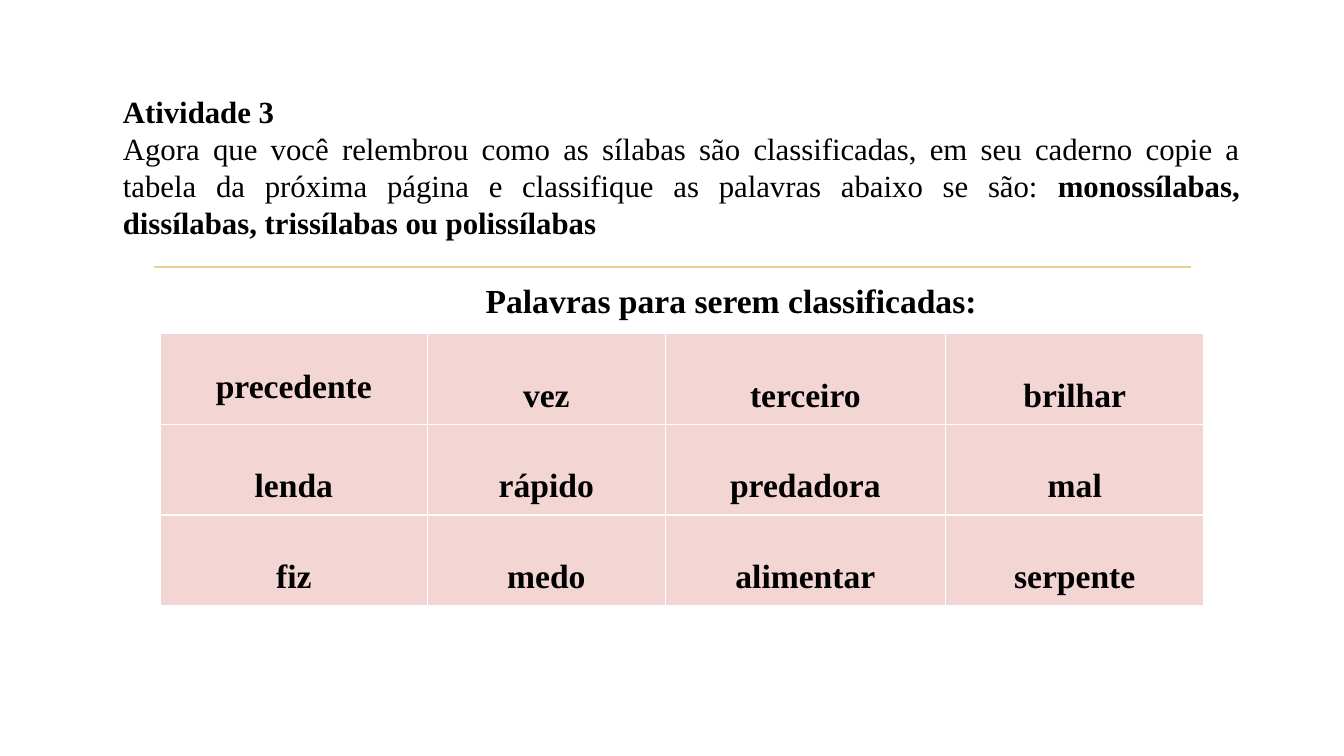
from lxml import etree
from pptx import Presentation
from pptx.dml.color import RGBColor
from pptx.enum.shapes import MSO_CONNECTOR
from pptx.enum.text import MSO_ANCHOR, MSO_AUTO_SIZE, PP_ALIGN
from pptx.oxml.ns import qn
from pptx.util import Pt

STRAIGHT = MSO_CONNECTOR.STRAIGHT
TOP = MSO_ANCHOR.TOP
FIT_SHAPE = MSO_AUTO_SIZE.SHAPE_TO_FIT_TEXT
LEFT, CENTER, JUSTIFY = PP_ALIGN.LEFT, PP_ALIGN.CENTER, PP_ALIGN.JUSTIFY

BLACK = RGBColor(0x00, 0x00, 0x00)
GOLD = RGBColor(0xE8, 0xD1, 0x91)
PINK = RGBColor(0xF3, 0xD5, 0xD3)
FONT = "Times New Roman"

STATEMENT = [
    (LEFT, [("Atividade 3", True)]),
    (JUSTIFY, [
        ("Agora que você relembrou como as sílabas são classificadas, em seu caderno "
         "copie a tabela da próxima página e classifique as palavras abaixo se são: ", False),
        ("monossílabas, dissílabas, trissílabas ou polissílabas", True),
    ]),
]
WORDS = [
    ["precedente", "vez", "terceiro", "brilhar"],
    ["lenda", "rápido", "predadora", "mal"],
    ["fiz", "medo", "alimentar", "serpente"],
]
COLUMN_WIDTHS = [190.8, 169.9, 200.2, 184.7]


def add_run(p, text, size, bold=True):
    """Append one black run to a paragraph."""
    r = p.add_run()
    r.text = text
    r.font.name = FONT
    r.font.size = Pt(size)
    r.font.bold = bold
    r.font.color.rgb = BLACK


def place_statement(s, left, top, width, height):
    """Fill the title placeholder with the activity statement."""
    sp = s.shapes.title
    sp.left, sp.top, sp.width, sp.height = Pt(left), Pt(top), Pt(width), Pt(height)
    tf = sp.text_frame
    tf.word_wrap = True
    tf.auto_size = FIT_SHAPE
    tf.vertical_anchor = TOP
    for i, (align, runs) in enumerate(STATEMENT):
        p = tf.add_paragraph() if i else tf.paragraphs[0]
        p.alignment = align
        for text, bold in runs:
            add_run(p, text, 22, bold)


def add_divider(s, left, top, width):
    """Draw the thin gold rule."""
    line = s.shapes.add_connector(STRAIGHT, Pt(left), Pt(top), Pt(left + width), Pt(top))
    line.line.color.rgb = GOLD
    line.line.width = Pt(1.25)
    etree.SubElement(line._element.spPr, qn("a:effectLst"))


def add_caption(s, left, top, width, height):
    """Add the heading above the word table."""
    sp = s.shapes.add_textbox(Pt(left), Pt(top), Pt(width), Pt(height))
    tf = sp.text_frame
    tf.word_wrap = False
    tf.auto_size = FIT_SHAPE
    add_run(tf.paragraphs[0], "Palavras para serem classificadas:", 24)


def add_word_table(s, left, top, width, height):
    """Add the grid of words to classify."""
    table = s.shapes.add_table(len(WORDS), len(WORDS[0]), Pt(left), Pt(top),
                               Pt(width), Pt(height)).table
    table.horz_banding = False
    for column, column_width in zip(table.columns, COLUMN_WIDTHS):
        column.width = Pt(column_width)
    for row, words in zip(table.rows, WORDS):
        row.height = Pt(height / len(WORDS))
        for cell, word in zip(row.cells, words):
            cell.fill.solid()
            cell.fill.fore_color.rgb = PINK
            cell.vertical_anchor = TOP
            cell.margin_top = Pt(25 if word == "precedente" else 31.2)
            p = cell.text_frame.paragraphs[0]
            p.alignment = CENTER
            add_run(p, word, 24)


def main():
    """Build the activity slide and save it."""
    prs = Presentation()
    prs.slide_width, prs.slide_height = Pt(960), Pt(540)
    s = prs.slides.add_slide(prs.slide_layouts[5])
    place_statement(s, 80.6, 62.6, 812.2, 113.8)
    add_divider(s, 110.2, 190.8, 740.2)
    add_caption(s, 339.8, 196.6, 368.6, 36)
    add_word_table(s, 114.5, 238.3, sum(COLUMN_WIDTHS), 194.4)
    prs.save("out.pptx")


if __name__ == "__main__":
    main()
